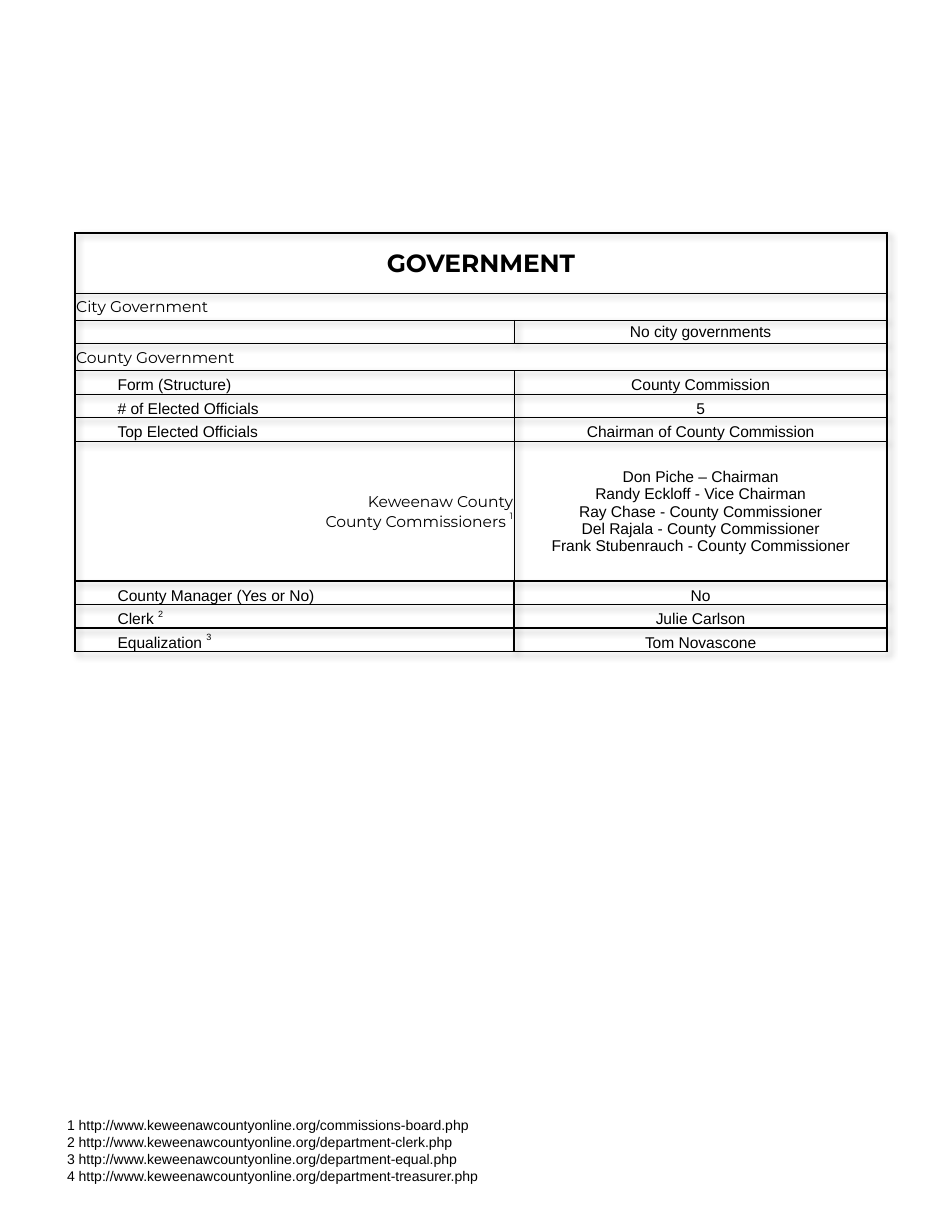
from lxml.etree import SubElement
from pptx import Presentation
from pptx.dml.color import RGBColor
from pptx.enum.text import MSO_ANCHOR, MSO_AUTO_SIZE, PP_ALIGN
from pptx.oxml import parse_xml
from pptx.oxml.ns import nsdecls, qn
from pptx.util import Inches, Pt

INK = "000000"
LABEL = {"align": PP_ALIGN.LEFT, "anchor": MSO_ANCHOR.BOTTOM, "left": 0.38,
         "font": {"name": "Arial", "size": Pt(10), "bold": False}}
VALUE = {**LABEL, "align": PP_ALIGN.CENTER, "left": 0.01}
LIST = {**VALUE, "anchor": MSO_ANCHOR.MIDDLE}
HEAD = {**LIST, "align": PP_ALIGN.LEFT,
        "font": {"name": "Montserrat", "size": Pt(10), "bold": False}}
TITLE = {**LIST, "font": {"name": "Montserrat", "size": Pt(16), "bold": True}}
GROUP = {**HEAD, "align": PP_ALIGN.RIGHT, "left": 0.75}

BOARD = ["Don Piche – Chairman", "Randy Eckloff - Vice Chairman",
         "Ray Chase - County Commissioner", "Del Rajala - County Commissioner",
         "Frank Stubenrauch - County Commissioner"]
ROWS = [
    (0.54, [("GOVERNMENT", TITLE)]),
    (0.24, [("City Government", HEAD)]),
    (0.21, [("", LABEL), ("No city governments", LIST)]),
    (0.24, [("County Government", HEAD)]),
    (0.21, [("Form (Structure)", LABEL), ("County Commission", VALUE)]),
    (0.21, [("# of Elected Officials", LABEL), ("5", VALUE)]),
    (0.21, [("Top Elected Officials", LABEL),
            ("Chairman of County Commission", VALUE)]),
    (1.25, [("Keweenaw County\nCounty Commissioners ^1", GROUP),
            ("\n".join(BOARD), LIST)]),
    (0.21, [("County Manager (Yes or No)", LABEL), ("No", VALUE)]),
    (0.21, [("Clerk ^2", LABEL), ("Julie Carlson", VALUE)]),
    (0.21, [("Equalization ^3", LABEL), ("Tom Novascone", VALUE)]),
]
COLS = [3.92, 3.33]
THIN = range(1, 8)
SITE = "http://www.keweenawcountyonline.org/"
NOTES = ["commissions-board", "department-clerk", "department-equal",
         "department-treasurer"]


def color(code):
    """Turn a hex string into a colour."""
    return RGBColor.from_string(code)


def style(font, look):
    """Apply format values and the ink colour to a font."""
    for key, val in look.items():
        setattr(font, key, val)
    font.color.rgb = color(INK)


def write(frame, lines, look, align=PP_ALIGN.LEFT):
    """Write lines as paragraphs, raising the mark that follows a caret."""
    for num, line in enumerate(lines):
        para = frame.paragraphs[0] if num == 0 else frame.add_paragraph()
        para.alignment = align
        style(para.font, look)
        text, _, mark = line.partition("^")
        for part, base in ((text, 0), (mark, 50000)):
            if part:
                run = para.add_run()
                run.text = part
                style(run.font, look)
                if base:
                    run._r.get_or_add_rPr().set("baseline", str(base))
        if not line:
            end = SubElement(para._p, qn("a:endParaRPr"))
            end.set("sz", str(int(look["size"].pt * 100)))


def border(cell, row, first, last):
    """Draw thick outer and thin inner lines around a cell."""
    outer = {"L": first, "R": last, "T": row == THIN[0], "B": row == THIN[-1]}
    props = cell._tc.get_or_add_tcPr()
    for spot, side in enumerate("LRTB"):
        width = 1 if row not in THIN or outer[side] else 0.5
        props.insert(spot, parse_xml(
            f'<a:ln{side} {nsdecls("a")} w="{Pt(width)}"><a:solidFill>'
            f'<a:srgbClr val="{INK}"/></a:solidFill></a:ln{side}>'))


def fill(cell, text, form):
    """Place text in a clear cell with the given form."""
    edges = {"margin_left": Inches(form["left"]), "margin_right": Inches(0.01),
             "margin_top": Inches(0.01), "margin_bottom": 0,
             "vertical_anchor": form["anchor"]}
    for key, val in edges.items():
        setattr(cell, key, val)
    write(cell.text_frame, text.split("\n"), form["font"], form["align"])


def shade(table):
    """Give the table a soft shadow."""
    table._tbl.tblPr.insert(0, parse_xml(
        f'<a:effectLst {nsdecls("a")}><a:outerShdw blurRad="50800" dist="38100" '
        f'dir="2700000" algn="tl" rotWithShape="0"><a:srgbClr val="{INK}">'
        '<a:alpha val="40000"/></a:srgbClr></a:outerShdw></a:effectLst>'))


def add_grid(slide):
    """Add the government table."""
    high = sum(size for size, _ in ROWS)
    table = slide.shapes.add_table(
        len(ROWS), len(COLS), Inches(0.67), Inches(2.08),
        Inches(sum(COLS)), Inches(high)).table
    table.first_row = table.horz_banding = False
    shade(table)
    for col, wide in zip(table.columns, COLS):
        col.width = Inches(wide)
    for row, (size, items) in enumerate(ROWS):
        table.rows[row].height = Inches(size)
        span = len(items) == 1
        if span:
            table.cell(row, 0).merge(table.cell(row, 1))
        for col in range(len(COLS)):
            cell = table.cell(row, col)
            cell.fill.background()
            border(cell, row, col == 0, span or col == 1)
            if col < len(items):
                fill(cell, *items[col])


def add_notes(slide):
    """Add the numbered source links."""
    box = slide.shapes.add_textbox(
        Inches(0.5), Inches(9.92), Inches(6.25), Inches(0.71))
    frame = box.text_frame
    frame.word_wrap = True
    frame.auto_size = MSO_AUTO_SIZE.SHAPE_TO_FIT_TEXT
    lines = [f"{num} {SITE}{name}.php" for num, name in enumerate(NOTES, 1)]
    write(frame, lines, {"name": "Arial", "size": Pt(9)})


def main():
    """Build and save the slide."""
    deck = Presentation()
    deck.slide_width, deck.slide_height = Inches(8.5), Inches(11)
    slide = deck.slides.add_slide(deck.slide_layouts[6])
    add_grid(slide)
    add_notes(slide)
    deck.save("out.pptx")


if __name__ == "__main__":
    main()
